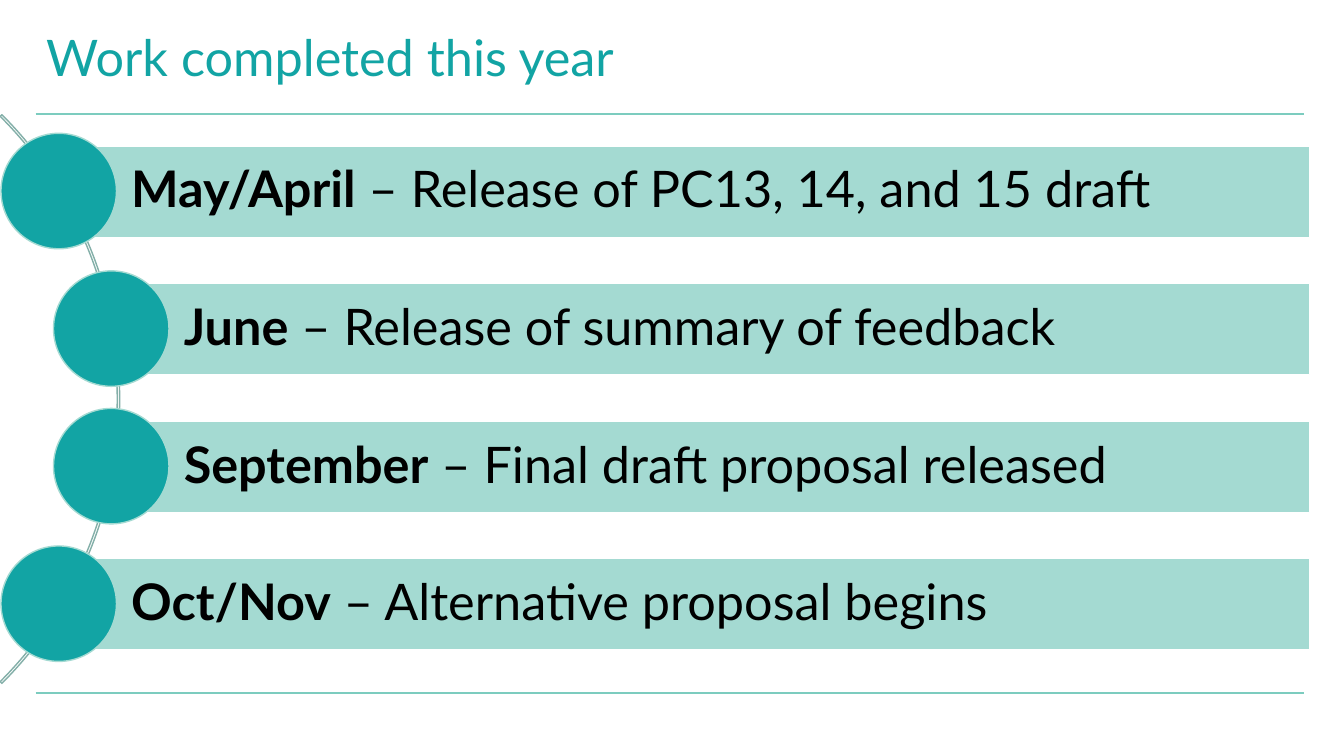
from dataclasses import dataclass

from lxml import etree
from pptx import Presentation
from pptx.dml.color import RGBColor
from pptx.enum.shapes import MSO_CONNECTOR, MSO_SHAPE
from pptx.enum.text import MSO_ANCHOR, MSO_AUTO_SIZE, PP_ALIGN
from pptx.oxml.ns import qn
from pptx.util import Emu, Pt

STRAIGHT = MSO_CONNECTOR.STRAIGHT
RECTANGLE, OVAL, BLOCK_ARC = MSO_SHAPE.RECTANGLE, MSO_SHAPE.OVAL, MSO_SHAPE.BLOCK_ARC
MIDDLE, LEFT = MSO_ANCHOR.MIDDLE, PP_ALIGN.LEFT
NO_FIT = MSO_AUTO_SIZE.NONE
TITLE_ONLY = 5
EMU_PER_PX = 9525


@dataclass(frozen=True)
class Theme:
    font: str = "Lato"
    size: int = 36
    teal: str = "12A4A4"
    mint: str = "A4DAD2"
    rule: str = "7CCCBF"
    arc: str = "83AFA8"
    text: str = "000000"
    white: str = "FFFFFF"


THEME = Theme()

# Month, what happened, left edge of the bar
MILESTONES = [
    ("May/April", " – Release of PC13, 14, and 15 draft", 56),
    ("June", " – Release of summary of feedback", 106),
    ("September", " – Final draft proposal released", 106),
    ("Oct/Nov", " – Alternative proposal begins", 56),
]
BAR_TOP, BAR_PITCH, BAR_HEIGHT, BAR_RIGHT = 139, 131, 87, 1247
DOT_SIZE = 110


def px(length):
    return Emu(length * EMU_PER_PX)


def rgb(code):
    return RGBColor.from_string(code)


def add_text(paragraph, text, color=THEME.text, size=THEME.size, bold=False):
    run = paragraph.add_run()
    run.text = text
    run.font.name = THEME.font
    run.font.size = Pt(size)
    run.font.bold = bold
    run.font.color.rgb = rgb(color)


def prepare_frame(frame, left_inset=10):
    frame.word_wrap = True
    frame.auto_size = NO_FIT
    frame.vertical_anchor = MIDDLE
    frame.margin_left = px(left_inset)
    frame.margin_right = frame.margin_top = frame.margin_bottom = px(10)
    paragraph = frame.paragraphs[0]
    paragraph.alignment = LEFT
    paragraph.line_spacing = 0.9
    return paragraph


def add_figure(slide, kind, left, top, width, height, line, fill=None):
    figure = slide.shapes.add_shape(kind, px(left), px(top), px(width), px(height))
    figure.shadow.inherit = False
    if fill:
        figure.fill.solid()
        figure.fill.fore_color.rgb = rgb(fill)
    else:
        figure.fill.background()
    figure.line.color.rgb = rgb(line)
    figure.line.width = Pt(1)
    return figure


def add_rule(slide, y):
    rule = slide.shapes.add_connector(STRAIGHT, px(34), px(y), px(1242), px(y))
    rule.line.color.rgb = rgb(THEME.rule)
    rule.line.width = Pt(1.5)
    etree.SubElement(rule._element.spPr, qn("a:effectLst"))


def add_title(slide, text):
    title = slide.shapes.title
    title.left, title.top, title.width, title.height = px(34), px(23), px(1210), px(69)
    add_text(prepare_frame(title.text_frame), text, color=THEME.teal)


def add_arc(slide):
    arc = add_figure(slide, BLOCK_ARC, -652, -3, 766, 766, THEME.arc)
    # Start angle, end angle and band thickness
    for index, value in enumerate((189, 27, 0.003)):
        arc.adjustments[index] = value


def add_milestone(slide, month, event, left, top):
    bar = add_figure(slide, RECTANGLE, left, top, BAR_RIGHT - left, BAR_HEIGHT,
                     THEME.white, THEME.mint)
    label = prepare_frame(bar.text_frame, left_inset=69)
    add_text(label, month, bold=True)
    add_text(label, event)
    # The dot is centred on the left edge of its bar
    add_figure(slide, OVAL, left - DOT_SIZE // 2, top + (BAR_HEIGHT - DOT_SIZE) // 2,
               DOT_SIZE, DOT_SIZE, THEME.mint, THEME.teal)


def main():
    deck = Presentation()
    deck.slide_width, deck.slide_height = px(1280), px(720)
    slide = deck.slides.add_slide(deck.slide_layouts[TITLE_ONLY])

    # Title and the two rules framing the content
    add_title(slide, "Work completed this year")
    for y in (660, 109):
        add_rule(slide, y)

    # Timeline
    add_arc(slide)
    for row, (month, event, left) in enumerate(MILESTONES):
        add_milestone(slide, month, event, left, BAR_TOP + row * BAR_PITCH)

    deck.save("out.pptx")


if __name__ == "__main__":
    main()
